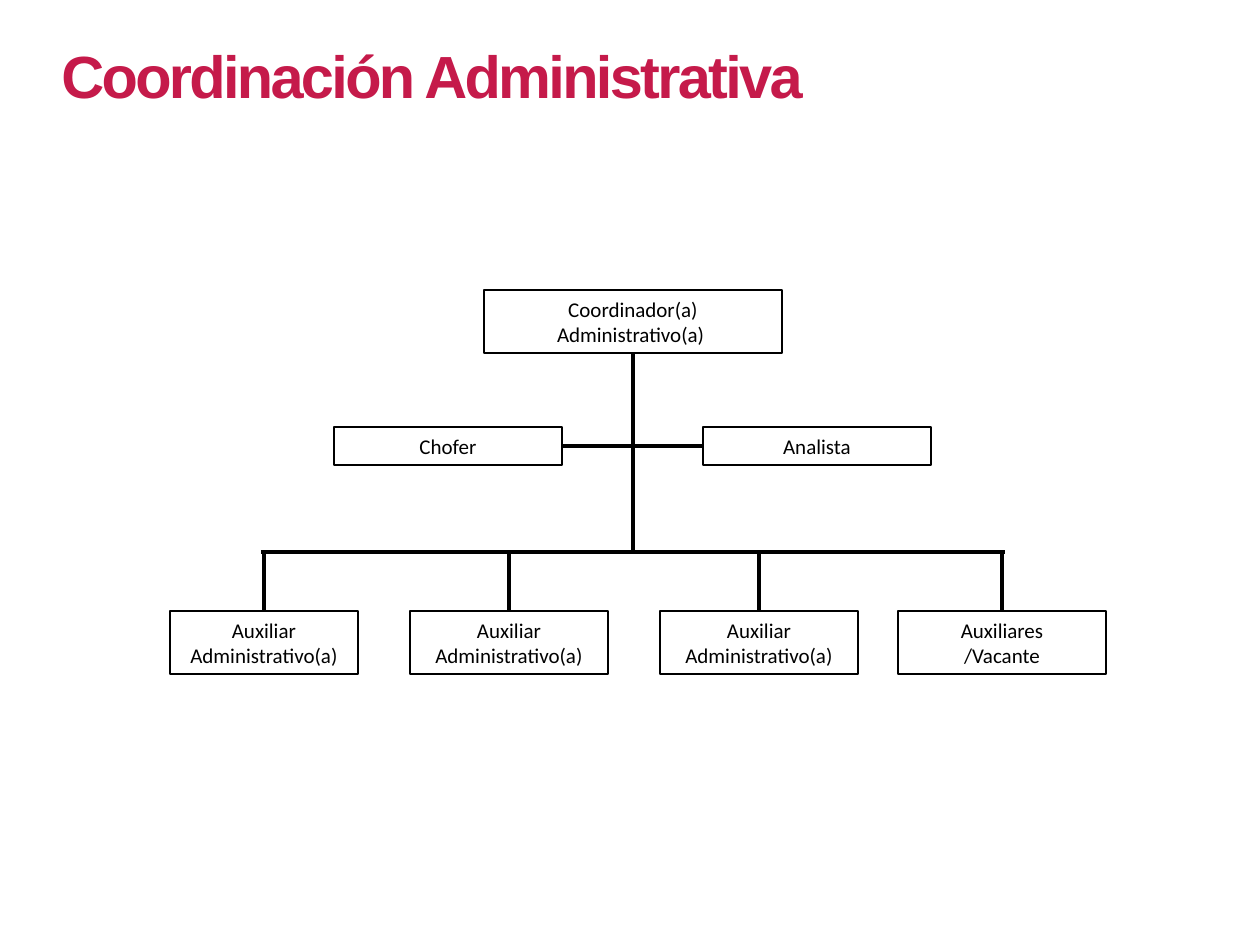
from pptx import Presentation
from pptx.dml.color import RGBColor
from pptx.enum.shapes import MSO_CONNECTOR, MSO_SHAPE
from pptx.enum.text import MSO_ANCHOR, MSO_AUTO_SIZE, PP_ALIGN
from pptx.oxml.ns import qn
from pptx.util import Emu, Pt
from lxml import etree

RECT = MSO_SHAPE.RECTANGLE
LINE = MSO_CONNECTOR.STRAIGHT
MID = PP_ALIGN.CENTER
LEFT = PP_ALIGN.LEFT
HIGH = MSO_ANCHOR.TOP
GROW = MSO_AUTO_SIZE.SHAPE_TO_FIT_TEXT
TOP, WEST, BASE, EAST = range(4)
SCALE = 914400 / 126
HUES = {"title": "C51A4A", "ink": "000000", "paper": "FFFFFF"}


def px(num):
    return Emu(round(num * SCALE))


def hue(name):
    return RGBColor.from_string(HUES[name])


class Chart:
    """Draws the parts of an organisation chart on one slide."""

    def __init__(self, slide):
        self.shapes = slide.shapes
        self.face = "Calibri"
        self.size = 12
        self.edge = 1.5
        self.link = 2.25

    def label(self, shape, lines, align):
        frame = shape.text_frame
        frame.word_wrap = True
        frame.auto_size = GROW
        frame.vertical_anchor = HIGH
        for i, line in enumerate(lines):
            para = frame.add_paragraph() if i else frame.paragraphs[0]
            para.alignment = align
            run = para.add_run()
            run.text = line
            run.font.name = self.face
            run.font.size = Pt(self.size)
            run.font.color.rgb = hue("ink")
        return run

    def title(self, text, x, y, w, h):
        box = self.shapes.add_textbox(px(x), px(y), px(w), px(h))
        run = self.label(box, [text], LEFT)
        run.font.name = "Arial"
        run.font.size = Pt(34)
        run.font.bold = True
        run.font.color.rgb = hue("title")
        run._r.get_or_add_rPr().set("spc", "-150")

    def box(self, lines, x, y, w, h):
        rect = self.shapes.add_shape(RECT, px(x), px(y), px(w), px(h))
        rect.shadow.inherit = False
        rect.fill.solid()
        rect.fill.fore_color.rgb = hue("paper")
        rect.line.color.rgb = hue("ink")
        rect.line.width = Pt(self.edge)
        self.label(rect, lines, MID)
        return rect

    def line(self, x1, y1, x2, y2, start=None, end=None):
        wire = self.shapes.add_connector(LINE, px(x1), px(y1), px(x2), px(y2))
        wire.line.color.rgb = hue("ink")
        wire.line.width = Pt(self.link)
        etree.SubElement(wire._element.spPr, qn("a:effectLst"))
        if start:
            wire.begin_connect(*start)
        if end:
            wire.end_connect(*end)


def main():
    deck = Presentation()
    deck.slide_width, deck.slide_height = px(1260), px(945)
    chart = Chart(deck.slides.add_slide(deck.slide_layouts[6]))

    chart.title("Coordinación Administrativa", 49, 33, 878, 87)

    trunk, bus, row = 633, 552, 611
    head = chart.box(["Coordinador(a) Administrativo(a) "], 484, 290, 298, 63)
    chart.line(trunk, 353, trunk, bus, start=(head, BASE))

    driver = chart.box(["Chofer"], 334, 427, 228, 38)
    clerk = chart.box(["Analista"], 703, 427, 228, 38)
    chart.line(562, 446, 703, 446, (driver, EAST), (clerk, WEST))

    chart.line(261, bus, 1005, bus)
    aide = ["Auxiliar Administrativo(a)"]
    staff = [
        (aide, 170, 188),
        (aide, 410, 198),
        (aide, 660, 198),
        (["Auxiliares", "/Vacante"], 898, 208),
    ]
    for lines, x, w in staff:
        post = chart.box(lines, x, row, w, 63)
        mid = x + w // 2
        chart.line(mid, bus, mid, row, end=(post, TOP))

    deck.save("out.pptx")


if __name__ == "__main__":
    main()
